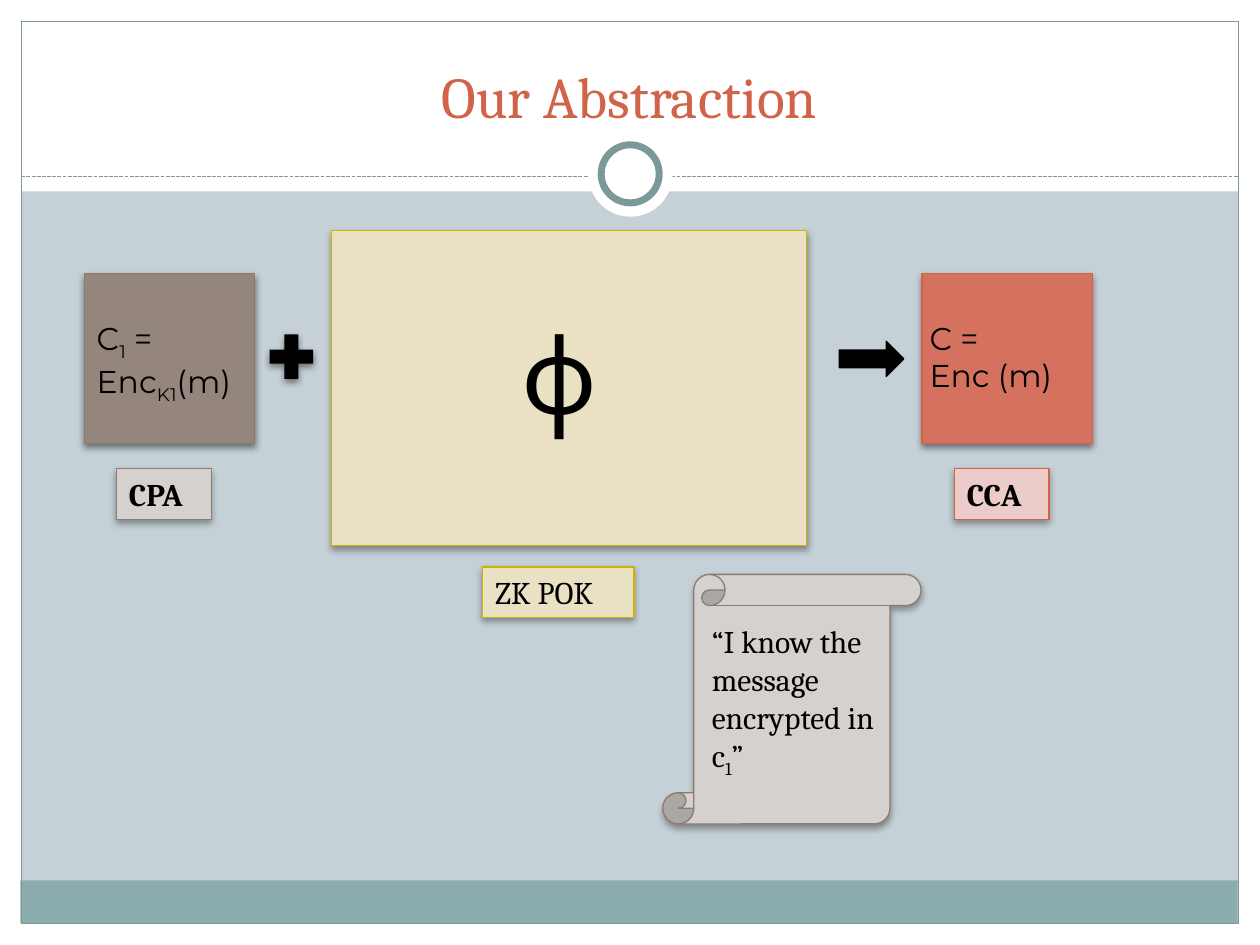
"""Builds the 'Our Abstraction' slide on turning CPA into CCA encryption."""
from lxml import etree
from pptx import Presentation
from pptx.dml.color import RGBColor
from pptx.enum.dml import MSO_LINE
from pptx.enum.shapes import MSO_CONNECTOR, MSO_SHAPE
from pptx.enum.text import MSO_ANCHOR, PP_ALIGN
from pptx.oxml.ns import qn
from pptx.util import Cm, Pt

RECT, OVAL = MSO_SHAPE.RECTANGLE, MSO_SHAPE.OVAL
PLUS, ARROW = MSO_SHAPE.MATH_PLUS, MSO_SHAPE.RIGHT_ARROW
SCROLL = MSO_SHAPE.VERTICAL_SCROLL
STRAIGHT, DASH = MSO_CONNECTOR.STRAIGHT, MSO_LINE.SQUARE_DOT
LEFT, CENTER = PP_ALIGN.LEFT, PP_ALIGN.CENTER
TOP, BOTTOM = MSO_ANCHOR.TOP, MSO_ANCHOR.BOTTOM
SERIF, SANS = "Cambria", "Montserrat"
COLORS = {
    "backdrop": "C5D1D7", "white": "FFFFFF", "black": "000000",
    "footer": "8CADAE", "frame": "7C999A",
    "taupe": "95867D", "taupe_edge": "8C7B70", "taupe_pale": "D5D1CF",
    "red": "D4725F", "red_edge": "D16349", "red_pale": "ECCCC9",
    "sand": "EAE1C5", "gold": "CCB400",
}


def rgb(name):
    """Return the named palette colour."""
    return RGBColor.from_string(COLORS[name])


def write(frame, paragraphs, font=SERIF, size=18, color="black", bold=False,
          align=LEFT, anchor=TOP):
    """Fill a text frame; every second piece of a paragraph is a subscript."""
    frame.word_wrap = True
    frame.vertical_anchor = anchor
    for row, pieces in enumerate(paragraphs):
        paragraph = frame.add_paragraph() if row else frame.paragraphs[0]
        paragraph.alignment = align
        for position, piece in enumerate(pieces):
            run = paragraph.add_run()
            run.text = piece
            run.font.name, run.font.size, run.font.bold = font, Pt(size), bold
            run.font.color.rgb = rgb(color)
            if position % 2:
                run._r.get_or_add_rPr().set("baseline", "-25000")


class SlideBuilder:
    """Holds the slide and draws its kinds of element."""

    def __init__(self, slide):
        self.slide = slide
        self.shapes = slide.shapes
        slide.background.fill.solid()
        slide.background.fill.fore_color.rgb = rgb("backdrop")

    def shape(self, kind, box, fill=None, line=None, width=0.75, shadow=0):
        """Draw a preset shape; shadow is its opacity in percent."""
        shape = self.shapes.add_shape(kind, *map(Cm, box))
        shape.shadow.inherit = False
        if fill:
            shape.fill.solid()
            shape.fill.fore_color.rgb = rgb(fill)
        else:
            shape.fill.background()
        if line:
            shape.line.color.rgb = rgb(line)
            shape.line.width = Pt(width)
        else:
            shape.line.fill.background()
        if shadow:
            effects = shape.element.spPr.find(qn("a:effectLst"))
            outer = etree.SubElement(
                effects, qn("a:outerShdw"), blurRad=str(Pt(4)),
                dist=str(Pt(2)), dir="5400000", rotWithShape="0")
            tint = etree.SubElement(outer, qn("a:srgbClr"), val=COLORS["black"])
            etree.SubElement(tint, qn("a:alpha"), val=str(shadow * 1000))
        return shape

    def label(self, box, caption, fill, line, bold=False):
        """Draw a captioned tag."""
        tag = self.shape(RECT, box, fill, line, shadow=35)
        write(tag.text_frame, [[caption]], bold=bold)

    def text(self, box, paragraphs, **style):
        """Add a free text box."""
        write(self.shapes.add_textbox(*map(Cm, box)).text_frame,
              paragraphs, **style)

    def dashed_rule(self, left, right, y):
        """Draw a horizontal dashed line."""
        rule = self.shapes.add_connector(
            STRAIGHT, Cm(left), Cm(y), Cm(right), Cm(y))
        rule.line.color.rgb = rgb("frame")
        rule.line.width = Pt(0.75)
        rule.line.dash_style = DASH
        etree.SubElement(rule.element.spPr, qn("a:effectLst"))

    def title(self, box, heading):
        """Place the title placeholder in front of the frame."""
        title = self.shapes.title
        title.left, title.top, title.width, title.height = map(Cm, box)
        title.element.getparent().append(title.element)
        write(title.text_frame, [[heading]], size=33, color="red_edge",
              align=CENTER, anchor=BOTTOM)


def draw_frame(builder):
    """Draw the border, header and footer of the theme."""
    for margin in ((0, 18.62, 25.4, 0.43), (0, 0, 25.4, 3.86),
                   (0, 0, 0.43, 19.05), (24.97, 0, 0.43, 19.05)):
        builder.shape(RECT, margin, "white")
    builder.shape(RECT, (0.41, 17.75, 24.54, 0.86), "footer")
    builder.shape(RECT, (0.43, 0.43, 24.54, 18.19), line="frame")
    builder.dashed_rule(0.43, 24.97, 3.56)
    builder.shape(OVAL, (11.86, 2.67, 1.7, 1.7), "white")
    builder.shape(OVAL, (12.12, 2.92, 1.17, 1.17), "white", "frame", 4)


def draw_ciphertext(builder, left, text_left, formula, security, hue):
    """Draw a ciphertext square with its formula and security tag."""
    edge = f"{hue}_edge"
    builder.shape(RECT, (left, 5.51, 3.43, 3.43), hue, edge, shadow=45)
    builder.text((text_left, 6.3, 3.94, 1.8), formula, font=SANS)
    builder.label((left + 0.65, 9.45, 1.91, 1.02), security,
                  f"{hue}_pale", edge, bold=True)


def main():
    """Build and save the slide."""
    deck = Presentation()
    deck.slide_width, deck.slide_height = Cm(25.4), Cm(19.05)
    builder = SlideBuilder(deck.slides.add_slide(deck.slide_layouts[5]))
    draw_frame(builder)
    builder.title((0.84, 0.64, 23.7, 2.11), "Our Abstraction")

    draw_ciphertext(builder, 1.7, 1.7, [["C", "1", " = Enc", "K1", "(m)"]],
                    "CPA", "taupe")
    builder.shape(PLUS, (5.28, 6.58, 1.19, 1.22), "black", shadow=45)
    builder.shape(RECT, (6.68, 4.65, 9.58, 6.35), "sand", "gold", shadow=35)
    builder.text((10.26, 6.12, 2.74, 2.82), [["ϕ"]], font=SANS, size=60)
    builder.shape(ARROW, (16.92, 6.88, 1.3, 0.71), "black", "black")
    draw_ciphertext(builder, 18.59, 18.49, [["C ="], ["Enc (m)"]],
                    "CCA", "red")

    builder.label((9.73, 11.43, 3.05, 1.02), "ZK POK", "sand", "gold")
    builder.shape(SCROLL, (13.36, 11.58, 5.21, 5.03), "taupe_pale",
                  "taupe_edge", shadow=35)
    builder.text((14.1, 12.42, 3.84, 3.33),
                 [["“I know the message encrypted in c", "1", "”"]])
    deck.save("out.pptx")


if __name__ == "__main__":
    main()
